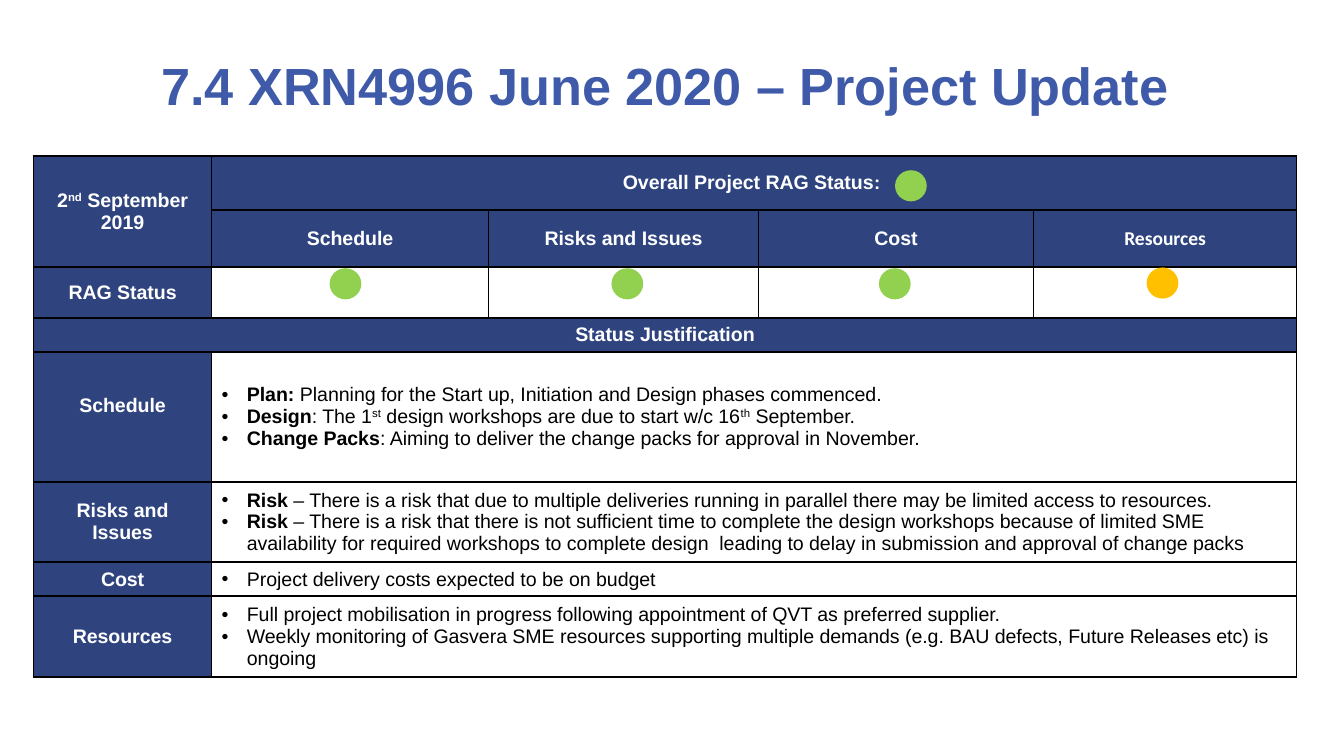
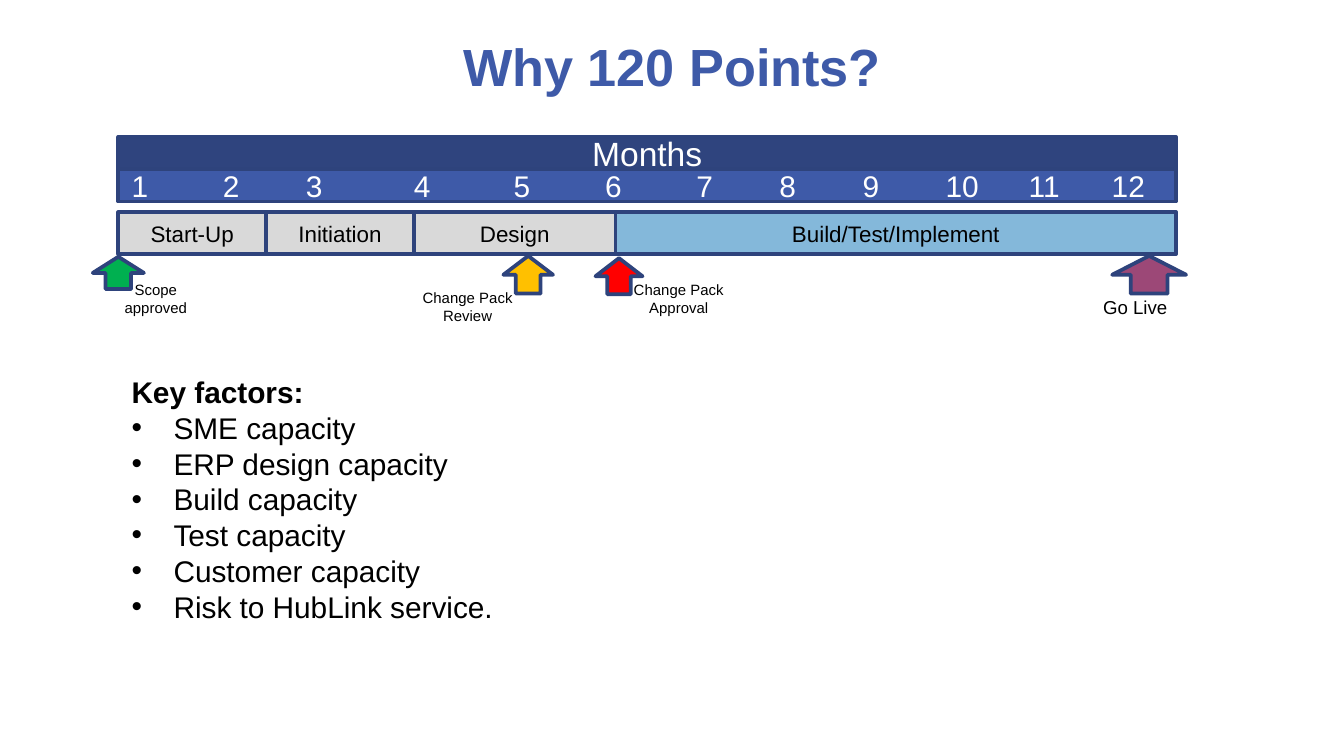
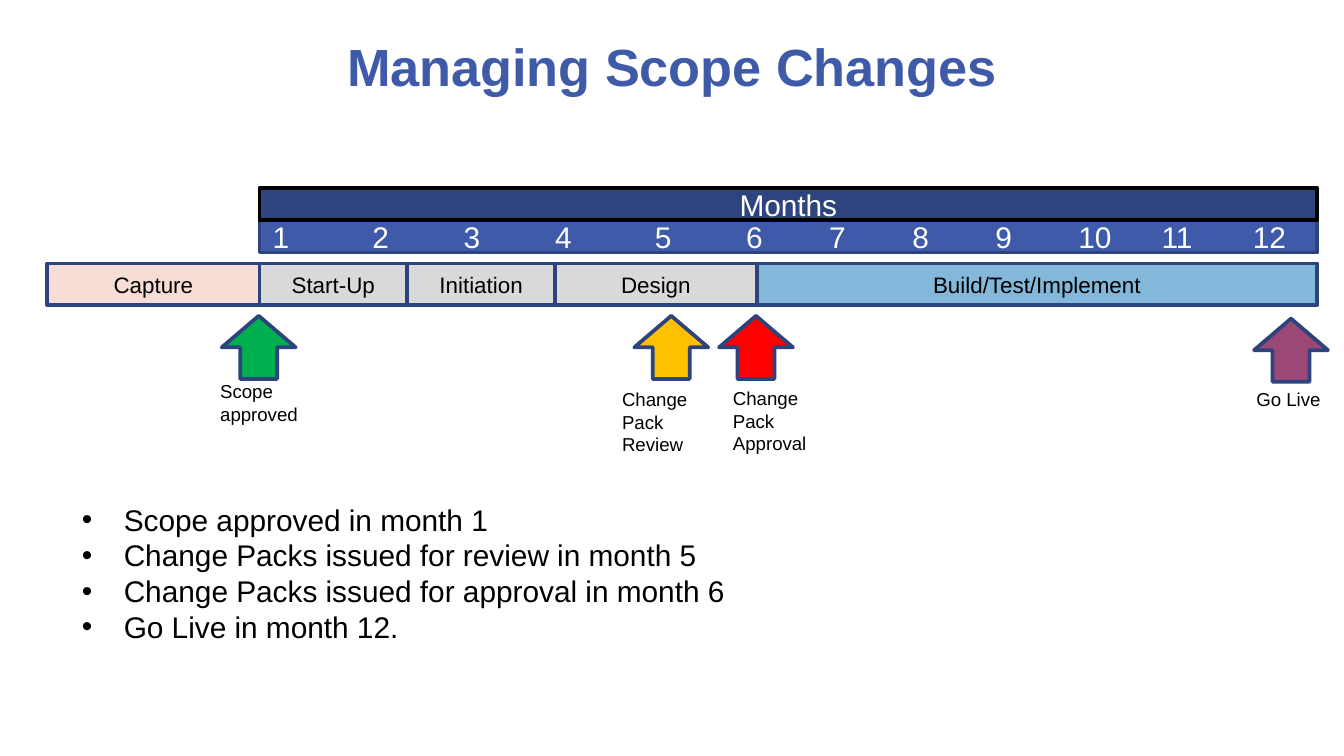
"""Build the June 2020 project update slides: status table and two delivery timelines."""
from itertools import accumulate
from typing import Any, NamedTuple, Optional, Sequence

from lxml.etree import SubElement
from pptx import Presentation
from pptx.dml.color import RGBColor
from pptx.enum.shapes import MSO_SHAPE as SHAPE
from pptx.enum.text import MSO_ANCHOR as ANCHOR, MSO_AUTO_SIZE as AUTO, PP_ALIGN as ALIGN
from pptx.oxml import parse_xml
from pptx.oxml.ns import nsdecls, qn
from pptx.util import Pt

COLORS = {
    "title": "3E5AA8", "months": "3E5AA8", "header": "2F447E", "outline": "2E437C",
    "black": "000000", "white": "FFFFFF", "green": "92D050", "amber": "FFC000",
    "scope": "00B050", "approval": "FF0000", "live": "9C4877",
    "prepare": "D9D9D9", "build": "84B8DA", "capture": "F7DDD6",
}
FONT = "Arial"
SPACE_16 = 4.45
BAR_H = 17.3
PHASE_H = 22.3
PHASE_DROP = 40.3


class Run(NamedTuple):
    text: str
    bold: bool = False
    sup: bool = False
    font: str = FONT
    size: Optional[float] = None


class Box(NamedTuple):
    left: float
    top: float
    width: float
    height: float


class Phase(NamedTuple):
    name: str
    width: float
    color: str


class Milestone(NamedTuple):
    label: str
    color: str
    cx: float
    cy: float
    length: float
    breadth: float
    label_box: Box
    size: float = 10
    align: Any = ALIGN.LEFT


class Dot(NamedTuple):
    left: float
    top: float
    color: str


PHASES = [
    Phase("Start-Up", 79.2, "prepare"),
    Phase("Initiation", 79.2, "prepare"),
    Phase("Design", 108, "prepare"),
    Phase("Build/Test/Implement", 300.3, "build"),
]
TIMELINE_W = sum(phase.width for phase in PHASES)


def rgb(name: str) -> RGBColor:
    return RGBColor.from_string(COLORS[name])


def write(p: Any, runs: Sequence[Run], size: float, color: str = "black") -> None:
    for run in runs:
        r = p.add_run()
        r.text = run.text
        r.font.name = run.font
        r.font.size = Pt(run.size or size)
        r.font.bold = run.bold
        r.font.color.rgb = rgb(color)
        if run.sup:
            r._r.get_or_add_rPr().set("baseline", "30000")


def add_bullet(p: Any, indent: float) -> None:
    pPr = p._p.get_or_add_pPr()
    pPr.set("marL", str(Pt(indent)))
    pPr.set("indent", str(-Pt(indent)))
    SubElement(pPr, qn("a:buFont")).set("typeface", FONT)
    SubElement(pPr, qn("a:buChar")).set("char", "•")


def write_bullets(tf: Any, items: Sequence[Sequence[Run]], size: float, indent: float,
                  align: Any = ALIGN.LEFT, after_heading: bool = False) -> None:
    for i, runs in enumerate(items):
        p = tf.add_paragraph() if i or after_heading else tf.paragraphs[0]
        p.alignment = align
        add_bullet(p, indent)
        write(p, runs, size)


def add_shape(shapes: Any, kind: Any, box: Box, fill: str, line: Optional[str] = "outline") -> Any:
    sp = shapes.add_shape(kind, *map(Pt, box))
    sp.shadow.inherit = False
    sp.fill.solid()
    sp.fill.fore_color.rgb = rgb(fill)
    if line:
        sp.line.color.rgb = rgb(line)
        sp.line.width = Pt(2)
    else:
        sp.line.fill.background()
    return sp


def add_bar(shapes: Any, box: Box, text: str, fill: str, size: float, color: str,
            line: str = "outline", align: Any = ALIGN.CENTER) -> Any:
    tf = add_shape(shapes, SHAPE.RECTANGLE, box, fill, line).text_frame
    tf.vertical_anchor = ANCHOR.MIDDLE
    p = tf.paragraphs[0]
    p.alignment = align
    write(p, [Run(text)], size, color)
    return p


def add_text(shapes: Any, box: Box) -> Any:
    tf = shapes.add_textbox(*map(Pt, box)).text_frame
    tf.word_wrap = True
    return tf


def add_title(s: Any, text: str, top: float = 10.1) -> None:
    tf = add_text(s.shapes, Box(36, top, 648, 50.4))
    tf.vertical_anchor = ANCHOR.MIDDLE
    p = tf.paragraphs[0]
    p.alignment = ALIGN.CENTER
    write(p, [Run(text, True)], 28, "title")


def add_timeline(shapes: Any, left: float, top: float, gaps: Sequence[int],
                 size: float, header_line: str) -> None:
    lefts = accumulate((phase.width for phase in PHASES), initial=left)
    for phase, x in zip(PHASES, lefts):
        add_bar(shapes, Box(x, top + PHASE_DROP, phase.width, PHASE_H),
                phase.name, phase.color, 12, "black")
    months = [str(n) for n in range(1, 13)]
    p = add_bar(shapes, Box(left, top + BAR_H, TIMELINE_W, BAR_H), "\t".join(months),
                "months", 16, "white", align=ALIGN.LEFT)
    tabs = SubElement(p._p.get_or_add_pPr(), qn("a:tabLst"))
    steps = (SPACE_16 * (gap + 2 * len(month)) for gap, month in zip(gaps, months))
    for pos in accumulate(steps):
        tab = SubElement(tabs, qn("a:tab"))
        tab.set("pos", str(Pt(pos)))
        tab.set("algn", "l")
    add_bar(shapes, Box(left, top, TIMELINE_W, BAR_H), "Months", "header", size, "white", header_line)


def add_milestone(shapes: Any, m: Milestone) -> None:
    box = Box(m.cx - m.length / 2, m.cy - m.breadth / 2, m.length, m.breadth)
    add_shape(shapes, SHAPE.RIGHT_ARROW, box, m.color).rotation = 270
    tf = add_text(shapes, m.label_box)
    tf.auto_size = AUTO.SHAPE_TO_FIT_TEXT
    p = tf.paragraphs[0]
    p.alignment = m.align
    write(p, [Run(m.label)], m.size)


def style_cell(cell: Any) -> None:
    cell.margin_left = cell.margin_right = Pt(5.4)
    cell.margin_top = cell.margin_bottom = Pt(2.7)
    cell.vertical_anchor = ANCHOR.MIDDLE
    cell.fill.background()
    tcPr = cell._tc.get_or_add_tcPr()
    for i, side in enumerate("LRTB"):
        tcPr.insert(i, parse_xml(
            f'<a:ln{side} {nsdecls("a")} w="{Pt(1)}"><a:solidFill>'
            f'<a:srgbClr val="{COLORS["black"]}"/></a:solidFill></a:ln{side}>'))


def write_header(cell: Any, *runs: Run) -> None:
    cell.fill.solid()
    cell.fill.fore_color.rgb = rgb("header")
    p = cell.text_frame.paragraphs[0]
    p.alignment = ALIGN.CENTER
    write(p, runs, 10.5, "white")


def add_status_table(s: Any) -> None:
    widths = [95.4, 148.4, 144.6, 147.4, 140.9]
    heights = [29, 29, 27.4, 17.2, 69.6, 40.2, 18.2, 40.2]
    box = Box(18, 83.5, sum(widths), sum(heights))
    tbl = s.shapes.add_table(len(heights), len(widths), *map(Pt, box)).table
    tbl.first_row = tbl.horz_banding = False
    for col, width in zip(tbl.columns, widths):
        col.width = Pt(width)
    for row, height in zip(tbl.rows, heights):
        row.height = Pt(height)
    for cell in tbl.iter_cells():
        style_cell(cell)

    tbl.cell(0, 0).merge(tbl.cell(1, 0))
    tbl.cell(0, 1).merge(tbl.cell(0, 4))
    tbl.cell(3, 0).merge(tbl.cell(3, 4))
    write_header(tbl.cell(0, 0), Run("2", True), Run("nd", True, True), Run(" September 2019", True))
    write_header(tbl.cell(0, 1), Run("Overall Project RAG Status", True), Run(": ", True, size=10))
    areas = ["Schedule", "Risks and Issues", "Cost", "Resources"]
    for c, area in enumerate(areas, 1):
        write_header(tbl.cell(1, c), Run(area, True, font="Calibri" if area == "Resources" else FONT))
    write_header(tbl.cell(2, 0), Run("RAG Status", True))
    write_header(tbl.cell(3, 0), Run("Status Justification", True))

    justifications = [
        [[Run("Plan: ", True),
          Run("Planning for the Start up, Initiation and Design phases commenced.")],
         [Run("Design", True), Run(": The 1"), Run("st", sup=True),
          Run(" design workshops are due to start w/c 16"), Run("th", sup=True), Run(" September.")],
         [Run("Change Packs", True),
          Run(": Aiming to deliver the change packs for approval in November.")]],
        [[Run("Risk", True),
          Run(" – There is a risk that due to multiple deliveries running in parallel "
              "there may be limited access to resources.")],
         [Run("Risk ", True),
          Run("– There is a risk that there is not sufficient time to complete the design workshops "
              "because of limited SME availability for required workshops to complete design  leading "
              "to delay in submission and approval of change packs")]],
        [[Run("Project delivery costs expected to be on budget")]],
        [[Run("Full project mobilisation in progress following appointment of QVT as preferred supplier.")],
         [Run("Weekly monitoring of Gasvera SME resources supporting multiple demands "
              "(e.g. BAU defects, Future Releases etc) is ongoing")]],
    ]
    for i, (area, items) in enumerate(zip(areas, justifications), 4):
        tbl.cell(i, 1).merge(tbl.cell(i, 4))
        write_header(tbl.cell(i, 0), Run(area, True))
        write_bullets(tbl.cell(i, 1).text_frame, items, 10.5, 13.5)
    tbl.cell(4, 0).margin_bottom = Pt(14.7)


def status_slide(s: Any) -> None:
    add_title(s, "7.4 XRN4996 June 2020 – Project Update ", 20.2)
    add_status_table(s)
    dots = [Dot(479.5, 91.2, "green"), Dot(176.6, 143.7, "green"), Dot(327.6, 143.7, "green"),
            Dot(470.9, 143.7, "green"), Dot(614.3, 143.3, "amber")]
    for dot in dots:
        add_shape(s.shapes, SHAPE.OVAL, Box(dot.left, dot.top, 17, 16.7), dot.color, None)


def points_slide(s: Any) -> None:
    add_title(s, "Why 120 Points?")
    add_timeline(s.shapes, 63.4, 73.4, (9, 8, 11, 10, 9, 9, 8, 8, 8, 6, 6), 18, "outline")
    milestones = [
        Milestone("Scope approved", "scope", 63.4, 146.2, 17.3, 27.4,
                  Box(49.7, 146.9, 67.7, 26.6), 8, ALIGN.CENTER),
        Milestone("Change Pack Review", "amber", 283, 147.2, 20.2, 26.6,
                  Box(216.7, 151.2, 67.7, 26.6), 8, ALIGN.CENTER),
        Milestone("Change Pack Approval", "approval", 331.6, 148, 19.4, 25.2,
                  Box(329.8, 146.9, 67.7, 26.6), 8, ALIGN.CENTER),
        Milestone("Go Live", "live", 615.6, 147.2, 20.2, 39.6, Box(583.9, 154.8, 54, 19.4)),
    ]
    for m in milestones:
        add_milestone(s.shapes, m)
    tf = add_text(s.shapes, Box(63.4, 196.6, TIMELINE_W, 143.3))
    write(tf.paragraphs[0], [Run("Key factors:", True)], 16)
    factors = ["SME capacity", "ERP design capacity", "Build capacity", "Test capacity",
               "Customer capacity", "Risk to HubLink service."]
    write_bullets(tf, [[Run(factor)] for factor in factors], 16, 22.5, after_heading=True)


def scope_slide(s: Any) -> None:
    add_title(s, "Managing Scope Changes")
    left, top = 139, 100.8
    shapes = s.shapes.add_group_shape().shapes
    add_bar(shapes, Box(25.4, top + PHASE_DROP, left - 25.4, PHASE_H), "Capture", "capture", 12, "black")
    add_timeline(shapes, left, top, (10, 9, 9, 10, 9, 8, 8, 8, 8, 6, 7), 16, "black")
    milestones = [
        Milestone("Scope approved", "scope", 138.6, 186.1, 33.8, 39.6, Box(110.9, 200.2, 67.7, 31.7)),
        Milestone("Change Pack Review", "amber", 359.6, 186.1, 33.8, 39.6,
                  Box(326.2, 204.5, 67.7, 43.9)),
        Milestone("Change Pack Approval", "approval", 405, 186.1, 33.8, 39.6,
                  Box(385.6, 203.8, 67.7, 43.9)),
    ]
    for m in milestones:
        add_milestone(shapes, m)
    add_milestone(s.shapes, Milestone("Go Live", "live", 691.6, 187.6, 33.8, 39.6,
                                      Box(666, 204.5, 54, 19.4)))
    tf = add_text(s.shapes, Box(36.7, 265, 635, 85))
    notes = ["Scope approved in month 1", "Change Packs issued for review in month 5",
             "Change Packs issued for approval in month 6", "Go Live in month 12."]
    write_bullets(tf, [[Run(note)] for note in notes], 16, 22.5, ALIGN.JUSTIFY)


def main() -> None:
    prs = Presentation()
    prs.slide_width, prs.slide_height = Pt(720), Pt(405)
    for build in (status_slide, points_slide, scope_slide):
        build(prs.slides.add_slide(prs.slide_layouts[6]))
    prs.save("out.pptx")


if __name__ == "__main__":
    main()
